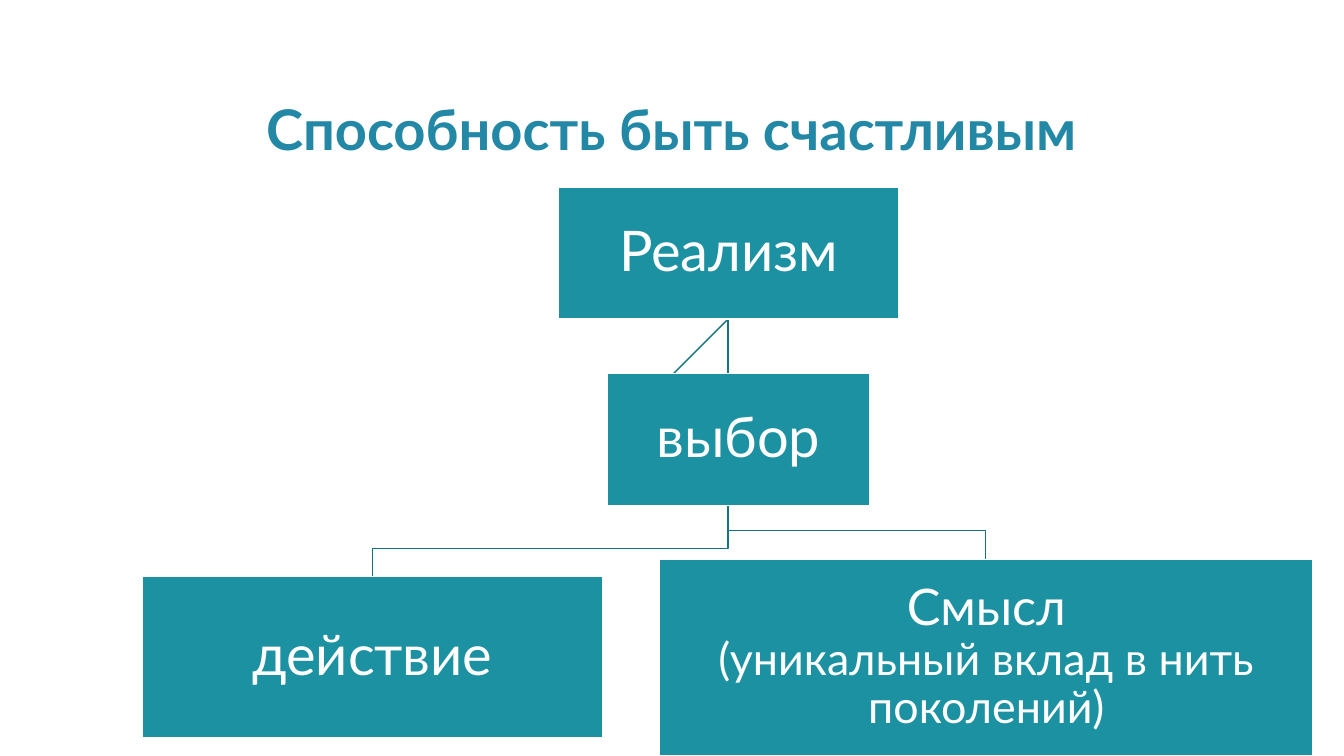
from pptx import Presentation
from pptx.dml.color import RGBColor
from pptx.enum.shapes import MSO_SHAPE
from pptx.enum.text import MSO_ANCHOR, MSO_AUTO_SIZE, PP_ALIGN
from pptx.util import Pt

RECTANGLE = MSO_SHAPE.RECTANGLE
MIDDLE, BOTTOM = MSO_ANCHOR.MIDDLE, MSO_ANCHOR.BOTTOM
CENTER = PP_ALIGN.CENTER
NO_AUTOFIT = MSO_AUTO_SIZE.NONE

TITLE_BLUE = RGBColor(0x23, 0x87, 0xA6)
TEAL = RGBColor(0x1B, 0x91, 0xA1)
DARK_TEAL = RGBColor(0x16, 0x74, 0x81)
WHITE = RGBColor(0xFF, 0xFF, 0xFF)

FONT = "Lato"
INSET = Pt(2)

# Box in points (left, top, width, height) and its lines of text with sizes
NODES = {
    "realism": ((399, 134, 243, 94), [("Реализм", 40)]),
    "action": ((101.5, 412, 329, 115), [("действие", 40)]),
    "meaning": ((471, 399.5, 467, 140.5),
                [("Смысл", 36), ("(уникальный вклад в нить поколений)", 32)]),
    "choice": ((433.5, 267, 188, 94), [("выбор", 40)]),
}
BRANCH_DROP = 20.25


def format_paragraph(paragraph, text, size, color, bold=False):
    paragraph.text = text
    for name, value in {"alignment": CENTER, "line_spacing": 0.9,
                        "space_before": Pt(0)}.items():
        setattr(paragraph, name, value)
    for name, value in {"name": FONT, "size": Pt(size), "bold": bold}.items():
        setattr(paragraph.font, name, value)
    paragraph.font.color.rgb = color


def add_title(slide, box, text):
    title = slide.shapes.title
    title.left, title.top, title.width, title.height = map(Pt, box)
    for name, value in {"auto_size": NO_AUTOFIT, "word_wrap": True,
                        "vertical_anchor": BOTTOM}.items():
        setattr(title.text_frame, name, value)
    format_paragraph(title.text_frame.paragraphs[0], text, 40, TITLE_BLUE, True)


def add_branch(slide, points):
    """Draw an open, unfilled path through points given in Pt."""
    start, *rest = points
    builder = slide.shapes.build_freeform(*start, scale=Pt(1))
    builder.add_line_segments(rest, close=False)
    branch = builder.convert_to_shape()
    branch.shadow.inherit = False
    branch.fill.background()
    branch.line.color.rgb = DARK_TEAL
    branch.line.width = Pt(1)


def add_node(slide, box, lines):
    node = slide.shapes.add_shape(RECTANGLE, *map(Pt, box))
    node.shadow.inherit = False
    node.fill.solid()
    node.fill.fore_color.rgb = TEAL
    node.line.color.rgb = WHITE
    node.line.width = Pt(1)
    frame = node.text_frame
    for name, value in {"word_wrap": True, "vertical_anchor": MIDDLE,
                        "margin_left": INSET, "margin_right": INSET,
                        "margin_top": INSET, "margin_bottom": INSET}.items():
        setattr(frame, name, value)
    for index, (text, size) in enumerate(lines):
        paragraph = frame.add_paragraph() if index else frame.paragraphs[0]
        format_paragraph(paragraph, text, size, WHITE)


def add_hierarchy(slide, nodes):
    """Draw the branches from the top node, then the nodes over them."""
    left, top, width, height = nodes["realism"][0]
    root = (left + width / 2, top + height)

    left, top, width, height = nodes["choice"][0]
    add_branch(slide, [root, (left, top + height / 2)])

    for child in ("meaning", "action"):
        left, top, width, height = nodes[child][0]
        center, bend = left + width / 2, top - BRANCH_DROP
        add_branch(slide, [root, (root[0], bend), (center, bend), (center, top)])

    for box, lines in nodes.values():
        add_node(slide, box, lines)


def main():
    presentation = Presentation()
    presentation.slide_width, presentation.slide_height = Pt(960), Pt(540)
    slide = presentation.slides.add_slide(presentation.slide_layouts[5])
    add_title(slide, (101.5, 30, 756, 90), "Способность быть счастливым")
    add_hierarchy(slide, NODES)
    presentation.save("out.pptx")


if __name__ == "__main__":
    main()
